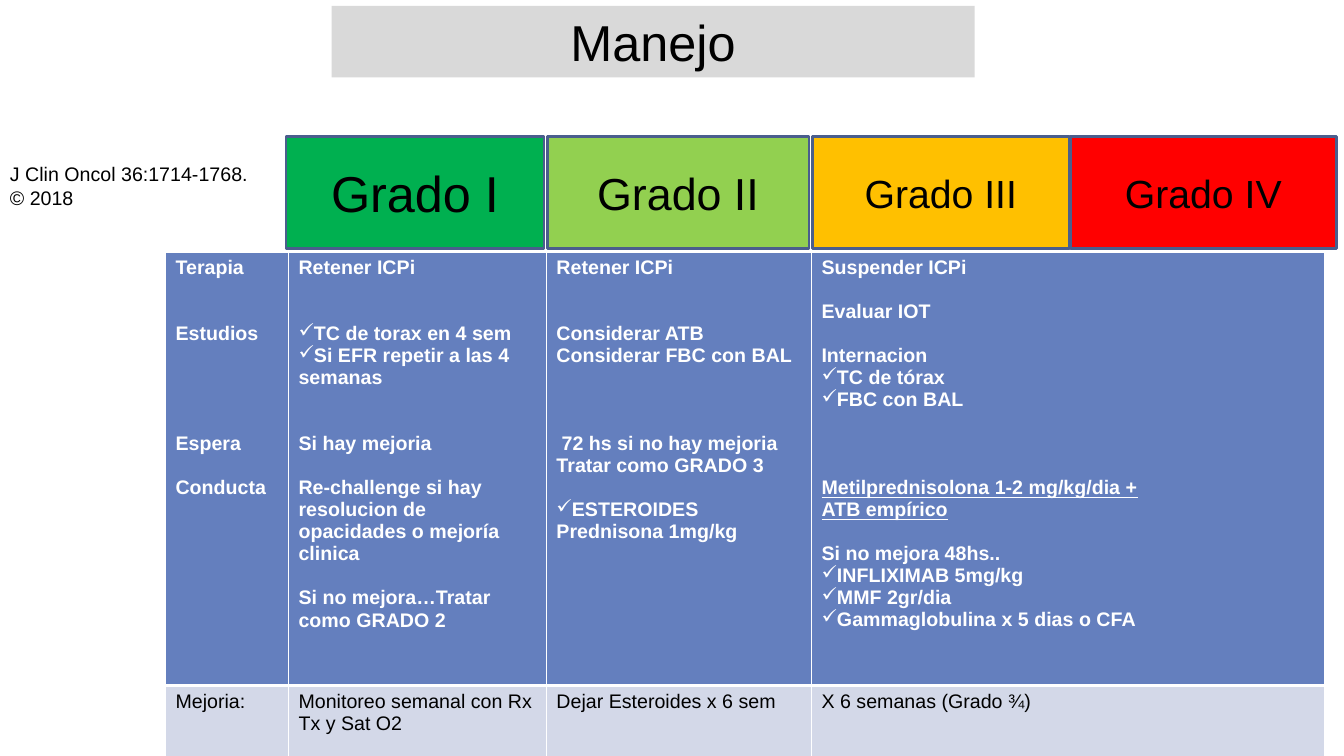
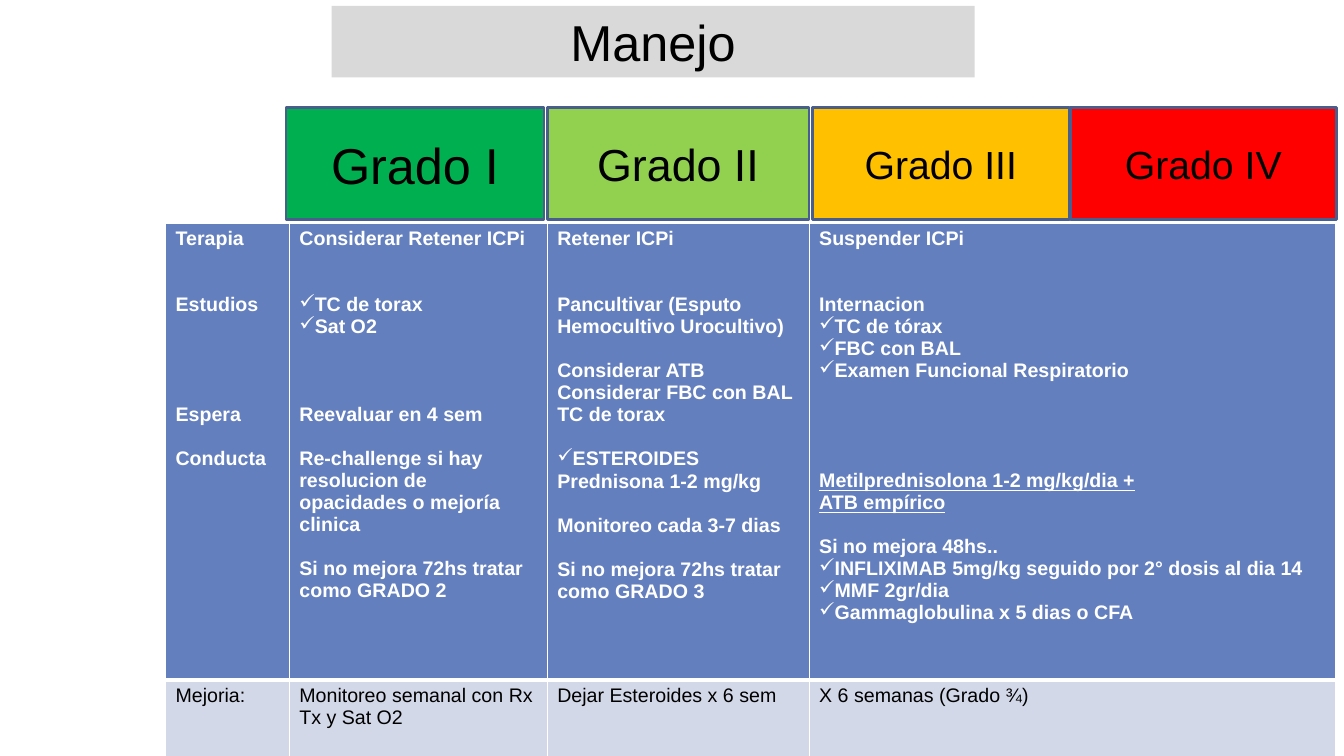
from dataclasses import dataclass

from lxml.etree import SubElement
from pptx import Presentation
from pptx.dml.color import RGBColor
from pptx.enum.shapes import MSO_SHAPE
from pptx.enum.text import MSO_ANCHOR, MSO_AUTO_SIZE, PP_ALIGN
from pptx.oxml.ns import qn
from pptx.util import Cm, Pt

FONT = "Arial"
BLACK = RGBColor(0x00, 0x00, 0x00)
WHITE = RGBColor(0xFF, 0xFF, 0xFF)
TITLE_GREY = RGBColor(0xD9, 0xD9, 0xD9)
GRADE_BORDER = RGBColor(0x4A, 0x5E, 0x8D)
PLAN_BLUE = RGBColor(0x64, 0x7F, 0xBE)
FOLLOW_UP_BLUE = RGBColor(0xD3, 0xD8, 0xE8)
GREEN = RGBColor(0x00, 0xB0, 0x50)
LIGHT_GREEN = RGBColor(0x92, 0xD0, 0x50)
AMBER = RGBColor(0xFF, 0xC0, 0x00)
RED = RGBColor(0xFF, 0x00, 0x00)

BODY_SIZE = 14
LINE_PITCH = 15.7
GRADE_HEIGHT = 2.82
TABLE_OFFSET = 2.9
TABLE_LEFT = 4.17

GRADES = [
    ("Grado I", 7.21, 6.5, GREEN, 36),
    ("Grado II", 13.79, 6.6, LIGHT_GREEN, 32),
    ("Grado III", 20.47, 6.48, AMBER, 28),
    ("Grado IV", 26.97, 6.71, RED, 28),
]


@dataclass
class Line:
    text: str
    gap: int = 0
    check: bool = False
    underline: bool = False
    indent: float = 0


def checks(*texts, gap=0):
    return [Line(text, 0 if i else gap, check=True) for i, text in enumerate(texts)]


def severe_treatment(gap, infliximab):
    return [
        Line("Metilprednisolona 1-2 mg/kg/dia +", gap, underline=True),
        Line("ATB empírico", underline=True),
        Line("Si no mejora 48hs..", 1),
        *checks(infliximab, "MMF 2gr/dia", "Gammaglobulina x 5 dias o CFA"),
    ]


RECHALLENGE = Line("Re-challenge si hay resolucion de opacidades o mejoría clinica", 1)
STAGES = [Line("Terapia"), Line("Estudios", 2), Line("Espera", 4), Line("Conducta", 1)]
FOLLOW_UP = [
    [Line("Mejoria:")],
    [Line("Monitoreo semanal con Rx Tx y Sat O2")],
    [Line("Dejar Esteroides x 6 sem")],
    [Line("X 6 semanas (Grado ¾)")],
]

FIRST_PLAN = [
    STAGES,
    [
        Line("Retener ICPi"),
        *checks("TC de torax en 4 sem", "Si EFR repetir a las 4 semanas", gap=2),
        Line("Si hay mejoria", 2),
        RECHALLENGE,
        Line("Si no mejora…Tratar como GRADO 2", 1),
    ],
    [
        Line("Retener ICPi"),
        Line("Considerar ATB", 2),
        Line("Considerar FBC con BAL"),
        Line("72 hs si no hay mejoria", 3, indent=0.13),
        Line("Tratar como GRADO 3"),
        *checks("ESTEROIDES Prednisona 1mg/kg", gap=1),
    ],
    [
        Line("Suspender ICPi"),
        Line("Evaluar IOT", 1),
        Line("Internacion", 1),
        *checks("TC de tórax", "FBC con BAL"),
        *severe_treatment(3, "INFLIXIMAB 5mg/kg"),
    ],
]

SECOND_PLAN = [
    STAGES,
    [
        Line("Considerar Retener ICPi"),
        *checks("TC de torax", "Sat O2", gap=2),
        Line("Reevaluar en 4 sem", 3),
        RECHALLENGE,
        Line("Si no mejora 72hs tratar como GRADO 2", 1),
    ],
    [
        Line("Retener ICPi"),
        Line("Pancultivar (Esputo Hemocultivo Urocultivo)", 2),
        Line("Considerar ATB", 1),
        Line("Considerar FBC con BAL"),
        Line("TC de torax"),
        *checks("ESTEROIDES Prednisona 1-2 mg/kg", gap=1),
        Line("Monitoreo cada 3-7 dias", 1),
        Line("Si no mejora 72hs tratar como GRADO 3", 1),
    ],
    [
        Line("Suspender ICPi"),
        Line("Internacion", 2),
        *checks("TC de tórax", "FBC con BAL", "Examen Funcional Respiratorio"),
        *severe_treatment(4, "INFLIXIMAB 5mg/kg seguido por 2° dosis al dia 14"),
    ],
]


def add_run(paragraph, text, size, color=BLACK, bold=False, underline=False):
    run = paragraph.add_run()
    run.text = text
    font = run.font
    font.name, font.size, font.bold, font.underline = FONT, Pt(size), bold, underline
    font.color.rgb = color


def add_centred(frame, text, size, anchor):
    frame.word_wrap = True
    frame.auto_size = MSO_AUTO_SIZE.NONE
    frame.vertical_anchor = anchor
    paragraph = frame.paragraphs[0]
    paragraph.alignment = PP_ALIGN.CENTER
    add_run(paragraph, text, size)


def add_title(slide, text):
    title = slide.shapes.title
    title.left, title.top, title.width, title.height = Cm(8.36), Cm(0.15), Cm(16.2), Cm(1.8)
    title.fill.solid()
    title.fill.fore_color.rgb = TITLE_GREY
    add_centred(title.text_frame, text, 36, MSO_ANCHOR.TOP)


def add_grades(slide, top):
    for text, left, width, color, size in GRADES:
        grade = slide.shapes.add_shape(
            MSO_SHAPE.RECTANGLE, Cm(left), Cm(top), Cm(width), Cm(GRADE_HEIGHT))
        grade.shadow.inherit = False
        grade.fill.solid()
        grade.fill.fore_color.rgb = color
        grade.line.color.rgb = GRADE_BORDER
        grade.line.width = Pt(2)
        add_centred(grade.text_frame, text, size, MSO_ANCHOR.MIDDLE)


def set_borders(cell, top, bottom):
    properties = cell._tc.get_or_add_tcPr()
    for side, width in (("L", 1), ("R", 1), ("T", top), ("B", bottom)):
        border = SubElement(properties, qn(f"a:ln{side}"), w=str(Pt(width)))
        fill = SubElement(border, qn("a:solidFill"))
        SubElement(fill, qn("a:srgbClr"), val=str(WHITE))


def write_lines(frame, lines, color, bold):
    for i, line in enumerate(lines):
        paragraph = frame.add_paragraph() if i else frame.paragraphs[0]
        properties = paragraph._p.get_or_add_pPr()
        properties.set("marL", str(Cm(line.indent)))
        properties.set("indent", "0")
        if line.check:
            SubElement(properties, qn("a:buChar"), char="✓")
        if line.gap:
            paragraph.space_before = Pt(line.gap * LINE_PITCH)
        add_run(paragraph, line.text, BODY_SIZE, color, bold, line.underline)


def add_plan_table(slide, top, column_widths, row_heights, plan):
    table = slide.shapes.add_table(
        2, len(column_widths), Cm(TABLE_LEFT), Cm(top),
        Cm(sum(column_widths)), Cm(sum(row_heights))).table
    table.horz_banding = False
    for column, width in zip(table.columns, column_widths):
        column.width = Cm(width)
    for row, height in zip(table.rows, row_heights):
        row.height = Cm(height)
    row_styles = [
        (plan, PLAN_BLUE, WHITE, True, 1, 3),
        (FOLLOW_UP, FOLLOW_UP_BLUE, BLACK, False, 3, 1),
    ]
    for row, (contents, fill, color, bold, above, below) in zip(table.rows, row_styles):
        for cell, lines in zip(row.cells, contents):
            set_borders(cell, above, below)
            cell.fill.solid()
            cell.fill.fore_color.rgb = fill
            write_lines(cell.text_frame, lines, color, bold)


def add_citation(slide, text):
    citation = slide.shapes.add_textbox(Cm(0), Cm(3.96), Cm(6.96), Cm(1.45))
    citation.text_frame.word_wrap = True
    add_run(citation.text_frame.paragraphs[0], text, BODY_SIZE)


def add_management_slide(deck, grades_top, column_widths, row_heights, plan):
    slide = deck.slides.add_slide(deck.slide_layouts[5])
    add_title(slide, "Manejo")
    add_grades(slide, grades_top)
    add_plan_table(slide, grades_top + TABLE_OFFSET, column_widths, row_heights, plan)
    return slide


def main():
    deck = Presentation()
    deck.slide_width, deck.slide_height = Cm(33.87), Cm(19.05)
    first = add_management_slide(
        deck, 3.45, (3.1, 6.5, 6.68, 12.93), (10.92, 2.34), FIRST_PLAN)
    add_citation(first, "J Clin Oncol 36:1714-1768. © 2018")
    add_management_slide(
        deck, 2.72, (3.12, 6.5, 6.6, 13.26), (11.51, 2.13), SECOND_PLAN)
    deck.save("out.pptx")


if __name__ == "__main__":
    main()
